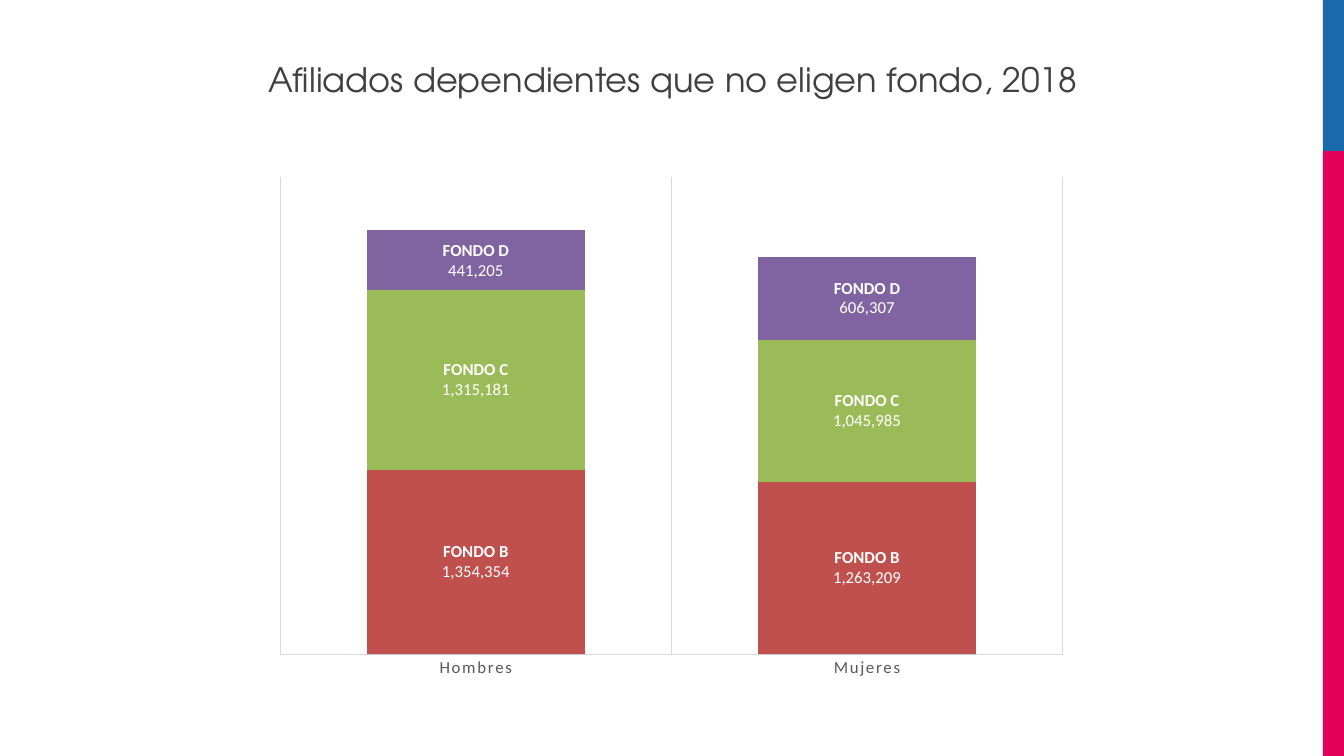
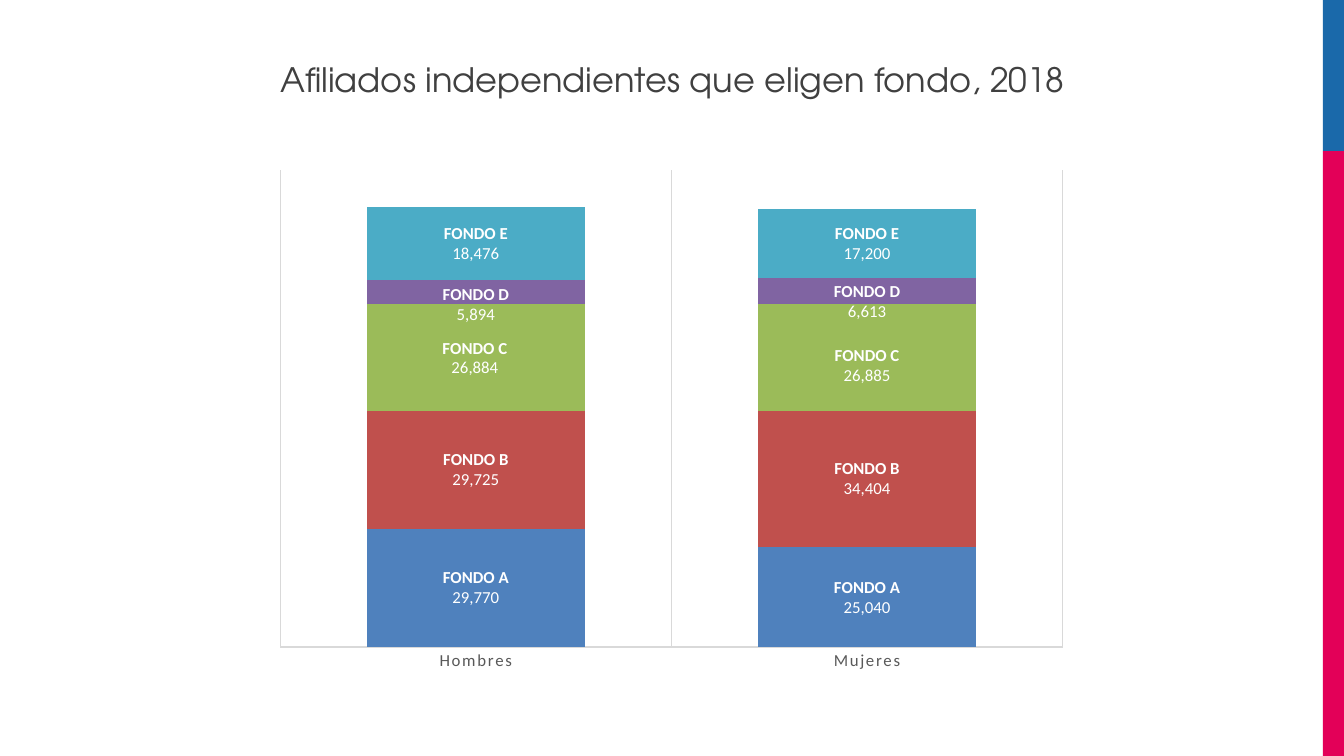
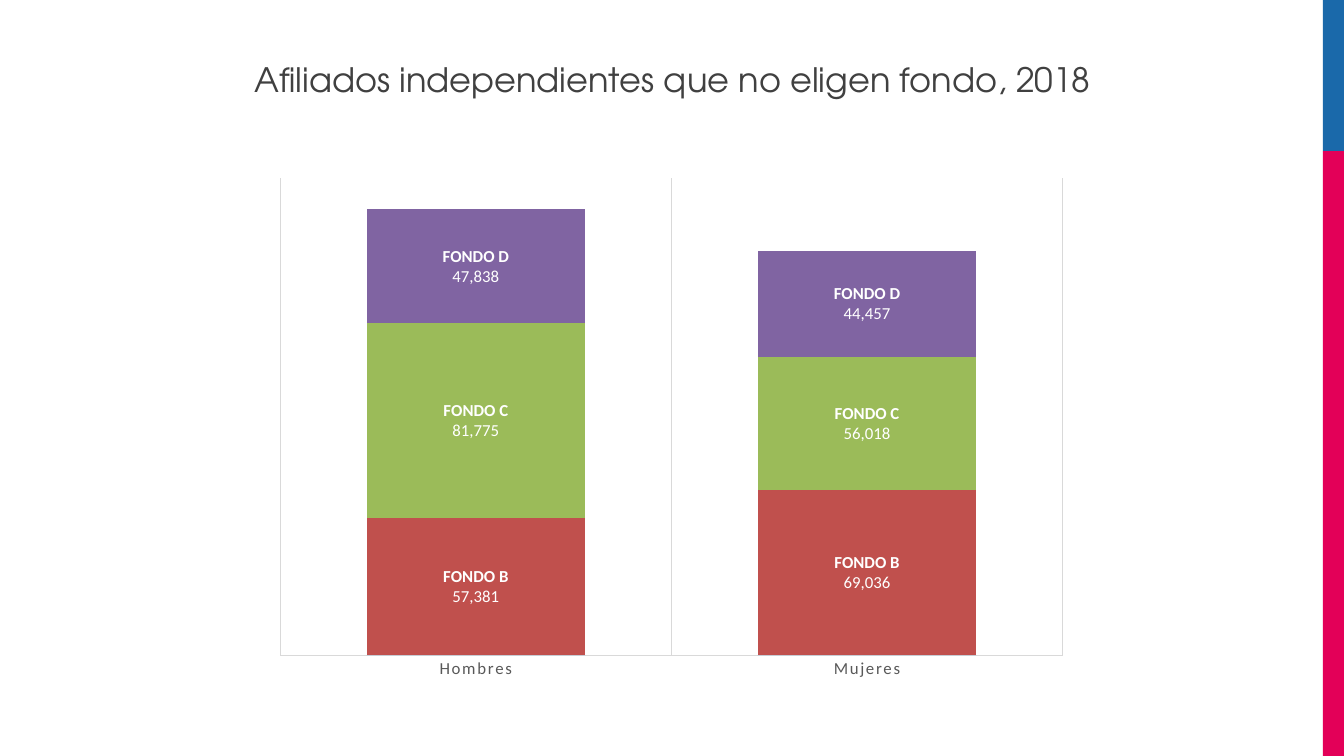
from lxml import etree
from pptx import Presentation
from pptx.chart.data import CategoryChartData
from pptx.dml.color import RGBColor
from pptx.enum.chart import XL_CHART_TYPE, XL_LABEL_POSITION, XL_TICK_MARK
from pptx.enum.shapes import MSO_SHAPE
from pptx.enum.text import MSO_ANCHOR, MSO_AUTO_SIZE, PP_ALIGN
from pptx.oxml.ns import qn
from pptx.util import Inches, Pt

STACKED = XL_CHART_TYPE.COLUMN_STACKED
CENTER_LABEL = XL_LABEL_POSITION.CENTER
INSIDE_END = XL_LABEL_POSITION.INSIDE_END
NO_TICK = XL_TICK_MARK.NONE
RECTANGLE = MSO_SHAPE.RECTANGLE
TOP = MSO_ANCHOR.TOP
GROW = MSO_AUTO_SIZE.SHAPE_TO_FIT_TEXT
CENTER = PP_ALIGN.CENTER

TITLE_ONLY = 5
THOUSANDS = "#,##0"
SEXES = ("Hombres", "Mujeres")
FUND_COLORS = {"A": "4F81BD", "B": "C0504D", "C": "9BBB59", "D": "8064A2", "E": "4BACC6"}

FUND_SLIDES = [
    dict(
        title="Afiliados dependientes que no eligen fondo, 2018",
        top=1.65,
        maximum=3500000,
        funds={"B": (1354354, 1263209), "C": (1315181, 1045985), "D": (441205, 606307)},
    ),
    dict(
        title="Afiliados independientes que eligen fondo, 2018",
        top=1.58,
        maximum=120000,
        funds={
            "A": (29770, 25040),
            "B": (29725, 34404),
            "C": (26884, 26885),
            "D": (5894, 6613),
            "E": (18476, 17200),
        },
        positions={"D": INSIDE_END},
        shifts={("C", 0): (-0.01, 0.01), ("C", 1): (0, 0.08)},
    ),
    dict(
        title="Afiliados independientes que no eligen fondo, 2018",
        top=1.66,
        maximum=200000,
        funds={"B": (57381, 69036), "C": (81775, 56018), "D": (47838, 44457)},
    ),
]


def color(value):
    return RGBColor.from_string(value)


def style_font(font, name="Calibri", size=12, fill="FFFFFF", bold=False):
    font.name = name
    font.size = Pt(size)
    font.bold = bold
    font.color.rgb = color(fill)


def write(para, text, align=CENTER, **style):
    para.alignment = align
    span = para.add_run()
    span.text = text
    style_font(span.font, **style)


def add_layout(parent, index, **settings):
    layout = etree.Element(qn("c:layout"))
    manual = etree.SubElement(layout, qn("c:manualLayout"))
    for name, value in settings.items():
        etree.SubElement(manual, qn(f"c:{name}")).set("val", str(value))
    parent.insert(index, layout)


class FundDeck:
    ink = "404040"
    axis_ink = "595959"
    rule = "D9D9D9"
    title_font = "TeX Gyre Adventor"
    bands = (("1A69AA", 0, 1.5), ("E30058", 1.5, 6))
    chart_width = 8.09
    chart_height = 5.18

    def __init__(self):
        self.deck = Presentation()
        self.deck.slide_width = Inches(13.33)
        self.deck.slide_height = Inches(7.5)
        self.page = None

    def add_page(self, title):
        self.page = self.deck.slides.add_slide(self.deck.slide_layouts[TITLE_ONLY])
        for fill, top, height in self.bands:
            self.add_band(fill, top, height)
        self.add_title(title)

    def add_band(self, fill, top, height):
        band = self.page.shapes.add_shape(
            RECTANGLE, Inches(13.12), Inches(top), Inches(0.21), Inches(height)
        )
        band.shadow.inherit = False
        band.fill.solid()
        band.fill.fore_color.rgb = color(fill)
        band.line.fill.background()

    def add_title(self, text):
        box = self.page.shapes.title
        box.left, box.top = Inches(2.17), Inches(0.58)
        box.width, box.height = Inches(9), Inches(0.4)
        frame = box.text_frame
        frame.margin_left = frame.margin_right = 0
        frame.margin_top = frame.margin_bottom = 0
        frame.vertical_anchor = TOP
        frame.word_wrap = True
        frame.auto_size = GROW
        write(frame.paragraphs[0], text, name=self.title_font, size=24, fill=self.ink)

    def add_fund_chart(self, top, maximum, funds, positions=None, shifts=None):
        data = CategoryChartData(number_format=THOUSANDS)
        data.categories = SEXES
        for order, fund in enumerate(FUND_COLORS, 1):
            name = f"FONDO {fund}" if fund in funds else f"Series {order}"
            data.add_series(name, funds.get(fund, (0, 0)))
        chart = self.page.shapes.add_chart(
            STACKED, Inches(2.62), Inches(top),
            Inches(self.chart_width), Inches(self.chart_height), data,
        ).chart
        chart.has_legend = False
        chart.has_title = False
        style_font(chart.font, size=10, fill="000000")
        plot = chart.plots[0]
        plot.gap_width = 79
        plot.overlap = 100
        plot.vary_by_categories = False
        self.format_axes(chart, maximum)
        for fund, series in zip(FUND_COLORS, plot.series):
            series.format.fill.solid()
            series.format.fill.fore_color.rgb = color(FUND_COLORS[fund])
            if fund in funds:
                position = (positions or {}).get(fund, CENTER_LABEL)
                self.label_series(series, funds[fund], position)
        for flag in chart.element.xpath(".//c:dLbl/c:showSerName"):
            flag.set("val", "1")
        for (fund, index), (right, down) in (shifts or {}).items():
            order = list(FUND_COLORS).index(fund)
            label = chart.element.xpath(
                f".//c:ser[c:idx/@val={order}]//c:dLbl[c:idx/@val={index}]"
            )[0]
            add_layout(label, 1, x=right / self.chart_width, y=down / self.chart_height)

    def format_axes(self, chart, maximum):
        values = chart.value_axis
        values.minimum_scale = 0
        values.maximum_scale = maximum
        values.has_major_gridlines = False
        values.tick_labels.number_format = THOUSANDS
        values.tick_labels.number_format_is_linked = False
        values.visible = False
        sexes = chart.category_axis
        sexes.has_major_gridlines = True
        sexes.major_tick_mark = NO_TICK
        sexes.minor_tick_mark = NO_TICK
        for line in (sexes.format.line, sexes.major_gridlines.format.line):
            line.color.rgb = color(self.rule)
            line.width = Pt(0.75)
        style_font(sexes.tick_labels.font, fill=self.axis_ink)
        chart.element.xpath(".//c:catAx/c:txPr//a:defRPr")[0].set("spc", "120")
        area = chart.element.xpath(".//c:plotArea")[0]
        for layout in area.findall(qn("c:layout")):
            area.remove(layout)
        add_layout(
            area, 0, layoutTarget="inner", xMode="edge", yMode="edge",
            x=0.16 / self.chart_width, y=0.11 / self.chart_height,
            w=7.76 / self.chart_width, h=4.73 / self.chart_height,
        )

    def label_series(self, series, values, position):
        labels = series.data_labels
        labels.show_value = True
        labels.show_series_name = True
        labels.number_format = THOUSANDS
        labels.number_format_is_linked = False
        labels.position = position
        style_font(labels.font)
        for index, value in enumerate(values):
            label = series.points[index].data_label
            frame = label.text_frame
            write(frame.paragraphs[0], series.name, bold=True)
            write(frame.add_paragraph(), f"{value:,}")
            label.position = position


def main():
    funds = FundDeck()
    for content in FUND_SLIDES:
        chart = dict(content)
        funds.add_page(chart.pop("title"))
        funds.add_fund_chart(**chart)
    funds.deck.save("out.pptx")


if __name__ == "__main__":
    main()
